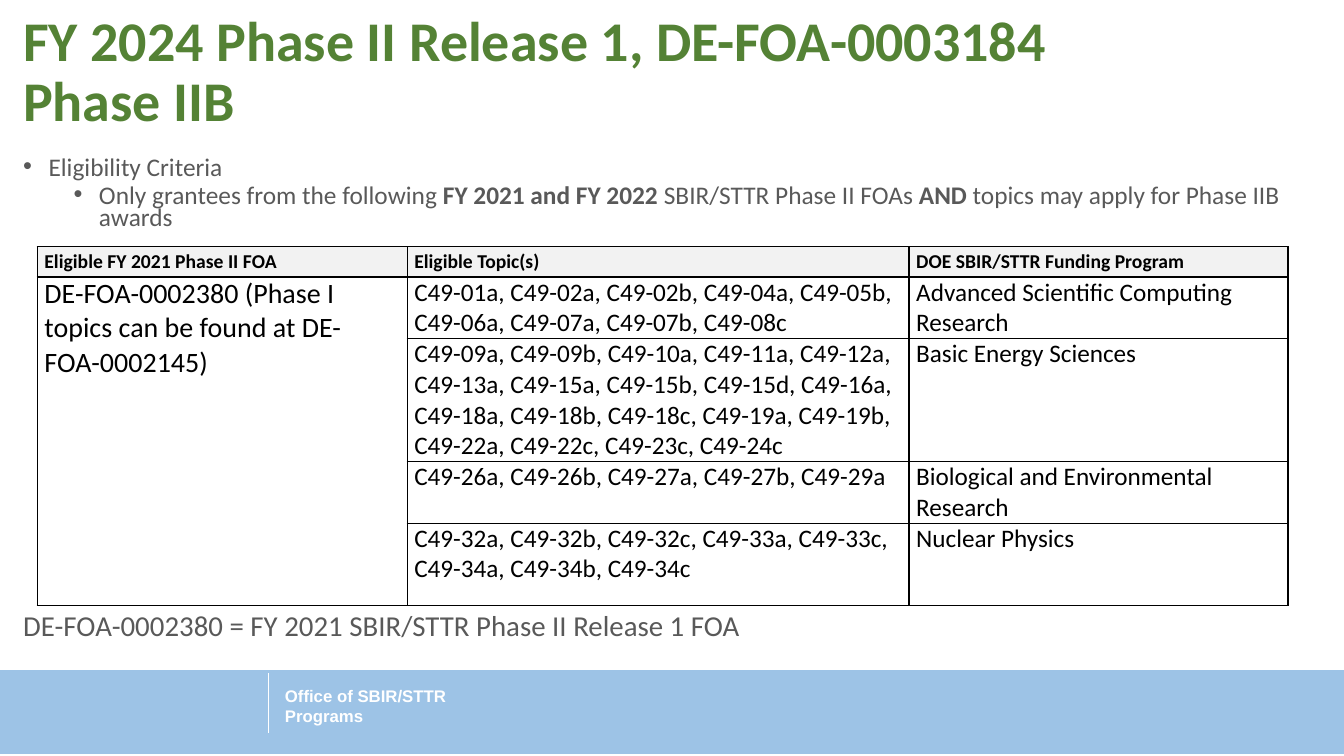
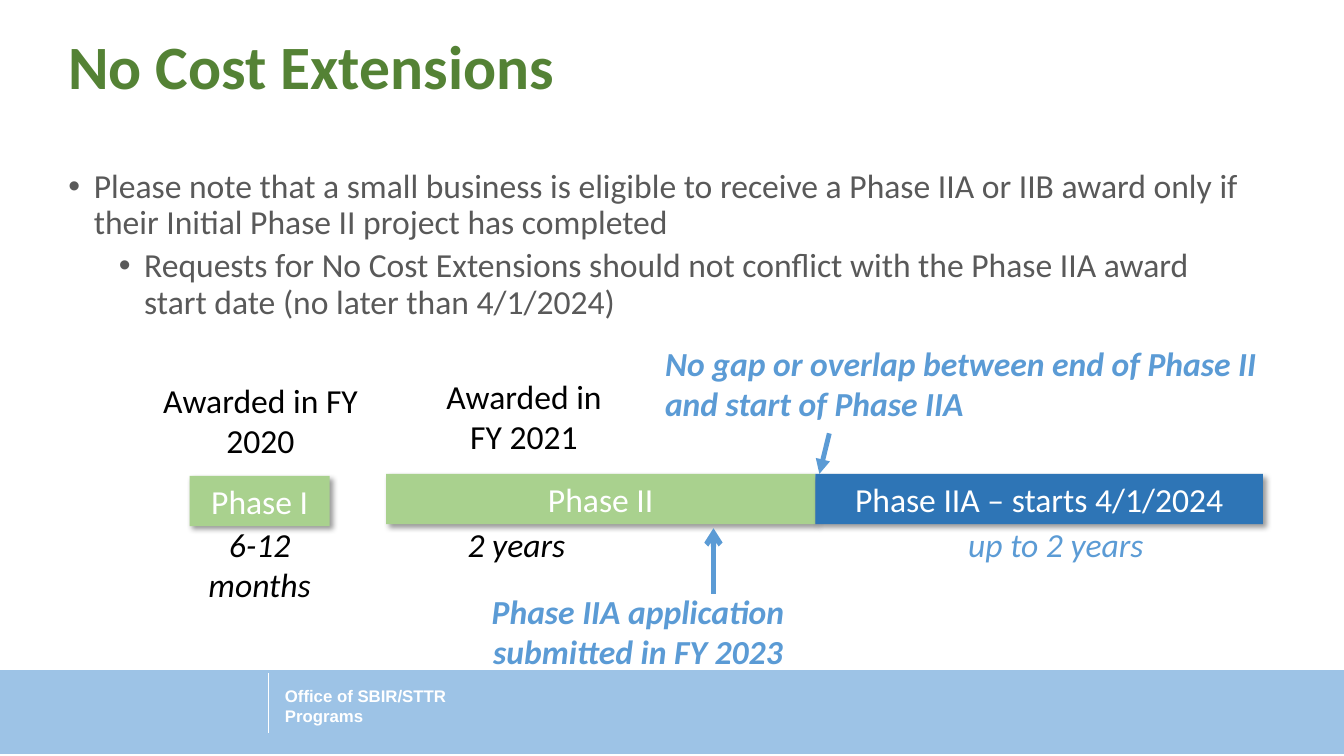
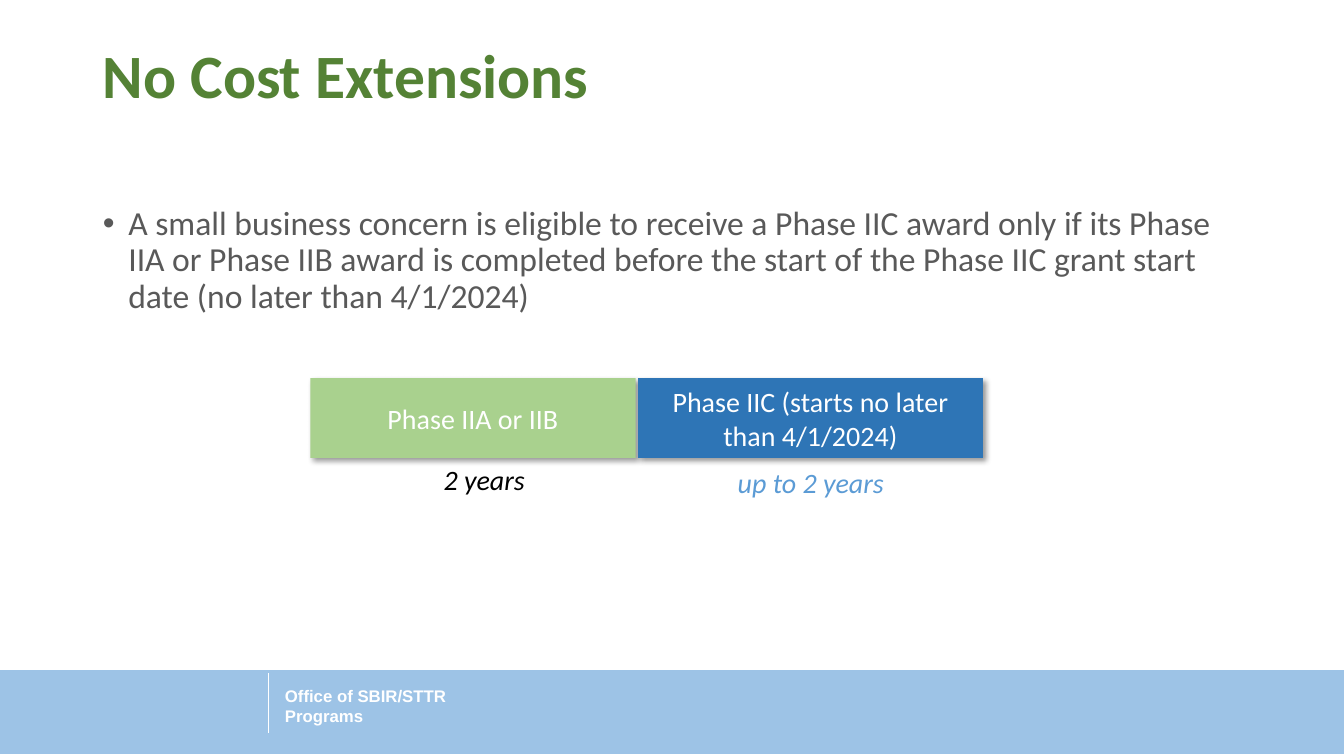
from lxml import etree
from pptx import Presentation
from pptx.dml.color import RGBColor
from pptx.enum import shapes, text as t
from pptx.oxml import parse_xml
from pptx.oxml.ns import nsdecls, qn
from pptx.util import Cm, Pt

GREEN = RGBColor(0x54, 0x82, 0x35)
LIME = RGBColor(0xA9, 0xD1, 0x8E)
GRAY = RGBColor(0x59, 0x59, 0x59)
PALE = RGBColor(0xF2, 0xF2, 0xF2)
SKY = RGBColor(0x9D, 0xC3, 0xE6)
BLUE = RGBColor(0x5B, 0x9B, 0xD5)
NAVY = RGBColor(0x2E, 0x75, 0xB6)
BLACK = RGBColor(0, 0, 0)
WHITE = RGBColor(0xFF, 0xFF, 0xFF)
LEFT, MID = t.PP_ALIGN.LEFT, t.PP_ALIGN.CENTER
TOP, CENTER = t.MSO_ANCHOR.TOP, t.MSO_ANCHOR.MIDDLE
NO_FIT, GROW = t.MSO_AUTO_SIZE.NONE, t.MSO_AUTO_SIZE.SHAPE_TO_FIT_TEXT

HEADS = ["Eligible FY 2021 Phase II FOA", "Eligible Topic(s)",
         "DOE SBIR/STTR Funding Program"]
SOURCE = "DE-FOA-0002380 (Phase I topics can be found at DE-FOA-0002145)"
TOPICS = [
    ("C49-01a, C49-02a, C49-02b, C49-04a, C49-05b, C49-06a, C49-07a, "
     "C49-07b, C49-08c", "Advanced Scientific Computing Research"),
    ("C49-09a, C49-09b, C49-10a, C49-11a, C49-12a, C49-13a, C49-15a, "
     "C49-15b, C49-15d, C49-16a, C49-18a, C49-18b, C49-18c, C49-19a, "
     "C49-19b, C49-22a, C49-22c, C49-23c, C49-24c", "Basic Energy Sciences"),
    ("C49-26a, C49-26b, C49-27a, C49-27b, C49-29a",
     "Biological and Environmental Research"),
    ("C49-32a, C49-32b, C49-32c, C49-33a, C49-33c, C49-34a, C49-34b, "
     "C49-34c", "Nuclear Physics"),
]


def write(para, text, size=24, color=BLACK, bold=False, italic=False,
          align=LEFT, font="Calibri", lead=None, before=None):
    """Fill a paragraph; ** switches bold on and off, a newline breaks the line."""
    para.alignment = align
    if lead:
        para.line_spacing = lead
    if before is not None:
        para.space_before = Pt(before)
    for row, line in enumerate(text.split("\n")):
        if row:
            para.add_line_break()
        for turn, part in enumerate(line.split("**")):
            run = para.add_run()
            run.text = part
            run.font.name, run.font.size = font, Pt(size)
            run.font.color.rgb = color
            run.font.bold = bold or turn % 2 == 1
            run.font.italic = italic


def place(shape, at):
    shape.left, shape.top, shape.width, shape.height = map(Cm, at)


def frame(shape, anchor=TOP, fit=NO_FIT):
    box = shape.text_frame
    box.word_wrap = True
    box.auto_size = fit
    box.vertical_anchor = anchor
    return box


def title(slide, text, at, size=44):
    place(slide.shapes.title, at)
    write(frame(slide.shapes.title).paragraphs[0], text, size=size,
          color=GREEN, bold=True, lead=0.9)


def indent(para, level, bullet):
    para.level = max(level, 0)
    props = para._p.get_or_add_pPr()
    props.set("marL", str(Cm(0.64 + 1.27 * level) if bullet else 0))
    props.set("indent", str(Cm(-0.64) if bullet else 0))
    if bullet:
        etree.SubElement(props, qn("a:buFont"), typeface="Arial")
        etree.SubElement(props, qn("a:buChar"), char="•")
    else:
        etree.SubElement(props, qn("a:buNone"))


def body(slide, at, items, size=24, lead=0.9):
    """Fill the body with bullets, one level deeper each; returns its frame."""
    shape = slide.placeholders[1]
    place(shape, at)
    box = frame(shape)
    for level, text in enumerate(items):
        para = box.add_paragraph() if level else box.paragraphs[0]
        indent(para, level, True)
        write(para, text, size=size, color=GRAY, lead=lead,
              before=5 if level else 0)
    return box


def label(slide, at, text, anchor=TOP, fit=GROW, **style):
    shape = slide.shapes.add_textbox(*map(Cm, at))
    write(frame(shape, anchor, fit).paragraphs[0], text, **style)
    return shape


def block(slide, at, fill):
    shape = slide.shapes.add_shape(shapes.MSO_SHAPE.RECTANGLE, *map(Cm, at))
    shape.fill.solid()
    shape.fill.fore_color.rgb = fill
    shape.line.fill.background()
    shape.shadow.inherit = False
    return shape


def phase(slide, at, text, fill, size=24):
    """A timeline bar with a soft shadow."""
    shape = block(slide, at, fill)
    shape.element.spPr.find(qn("a:effectLst")).append(parse_xml(
        f'<a:outerShdw {nsdecls("a")} blurRad="{Pt(4)}" dist="{Pt(3)}" '
        'dir="2700000" algn="tl" rotWithShape="0"><a:srgbClr val="000000">'
        '<a:alpha val="40000"/></a:srgbClr></a:outerShdw>'))
    write(frame(shape, CENTER).paragraphs[0], text, size=size, color=WHITE,
          align=MID)


def line(slide, ends, color, width, head=None):
    link = slide.shapes.add_connector(shapes.MSO_CONNECTOR.STRAIGHT,
                                      *map(Cm, ends))
    link.line.color.rgb = color
    link.line.width = Pt(width)
    if head:
        etree.SubElement(link.line._get_or_add_ln(), qn("a:tailEnd"), type=head)
    etree.SubElement(link.element.spPr, qn("a:effectLst"))
    return link


def brand(layout, slide):
    """Build the footer band and move it to the layout all slides share."""
    for spare in list(layout.placeholders)[2:]:
        layout.shapes.element.remove(spare.element)
    band = block(slide, (0, 16.89, 33.87, 2.11), SKY)
    name = label(slide, (6.93, 17.12, 5.36, 1.32),
                 "Office of SBIR/STTR Programs", anchor=CENTER, fit=NO_FIT,
                 size=12, color=WHITE, bold=True, font="Arial")
    rule = line(slide, (6.76, 16.97, 6.76, 18.47), WHITE, 1)
    for part in (band, name, rule):
        layout.shapes.element.append(part.element)


def cell(spot, text, size=18, fill=WHITE, anchor=TOP, bold=False):
    spot.margin_left = spot.margin_right = Cm(0.18)
    spot.margin_top = spot.margin_bottom = 0
    spot.vertical_anchor = anchor
    props = spot._tc.get_or_add_tcPr()
    for side in "LRTB":
        props.append(parse_xml(
            f'<a:ln{side} {nsdecls("a")} w="{Pt(1)}"><a:solidFill>'
            f'<a:srgbClr val="{BLACK}"/></a:solidFill></a:ln{side}>'))
    spot.fill.solid()
    spot.fill.fore_color.rgb = fill
    if text:
        write(spot.text_frame.paragraphs[0], text, size=size, bold=bold)


def grid(slide):
    cols, rows = (9.32, 12.65, 9.55), (0.76, 1.55, 3.1, 1.55, 2.08)
    area = map(Cm, (0.94, 6.22, sum(cols), sum(rows)))
    table = slide.shapes.add_table(len(rows), len(cols), *area).table
    table.first_row = table.horz_banding = False
    for col, width in zip(table.columns, cols):
        col.width = Cm(width)
    for row, height in zip(table.rows, rows):
        row.height = Cm(height)
    for col, head in enumerate(HEADS):
        cell(table.cell(0, col), head, size=14, fill=PALE, anchor=CENTER,
             bold=True)
    for row, (topics, office) in enumerate(TOPICS, 1):
        cell(table.cell(row, 0), SOURCE if row == 1 else "", size=20)
        cell(table.cell(row, 1), topics)
        cell(table.cell(row, 2), office)
    table.cell(1, 0).merge(table.cell(len(TOPICS), 0))


def criteria(slide):
    title(slide, "FY 2024 Phase II Release 1, DE-FOA-0003184\nPhase IIB",
          (0.33, 0.2, 30.48, 3.71), size=40)
    box = body(slide, (0.33, 3.89, 33.2, 13.36), [
        "Eligibility Criteria",
        "Only grantees from the following **FY 2021 and FY 2022 **SBIR/STTR "
        "Phase II FOAs **AND** topics may apply for Phase IIB awards",
    ], size=18.1, lead=0.7)
    note = box.add_paragraph()
    indent(note, 0, False)
    write(note, "DE-FOA-0002380 = FY 2021 SBIR/STTR Phase II Release 1 FOA",
          size=20.6, color=GRAY, lead=0.7, before=276)
    grid(slide)


def timing(slide):
    title(slide, "No Cost Extensions", (1.47, 0.79, 29.21, 3.68))
    body(slide, (1.47, 4.14, 30.48, 11.51), [
        "Please note that a small business is eligible to receive a Phase IIA "
        "or IIB award only if their Initial Phase II project has completed",
        "Requests for No Cost Extensions should not conflict with the Phase "
        "IIA award start date (no later than 4/1/2024)",
    ])
    phase(slide, (4.78, 11.99, 3.53, 1.27), "Phase I", LIME)
    phase(slide, (9.73, 11.94, 10.82, 1.27), "Phase II", LIME)
    for at, text, color in [
            ((4.88, 13.08, 3.33, 2.31), "6-12 months", BLACK),
            ((11.35, 13.08, 3.33, 1.27), "2 years", BLACK),
            ((23.7, 13.08, 5.82, 1.27), "up to 2 years", BLUE)]:
        label(slide, at, text, color=color, italic=True, align=MID)
    line(slide, (17.98, 14.96, 17.98, 13.31), BLUE, 3.75, "arrow")
    label(slide, (12.09, 14.76, 7.98, 2.31),
          "Phase IIA application submitted in FY 2023", color=BLUE, bold=True,
          italic=True, align=MID)
    label(slide, (3.2, 9.45, 6.73, 2.31), "Awarded in FY 2020", align=MID)
    label(slide, (10.87, 9.35, 4.67, 2.31), "Awarded in FY 2021", align=MID)
    label(slide, (16.51, 8.51, 15.67, 2.31),
          "No gap or overlap between end of Phase II and start of Phase IIA",
          color=BLUE, bold=True, italic=True)
    line(slide, (20.9, 10.92, 20.65, 11.94), BLUE, 3.5, "triangle")
    phase(slide, (20.55, 11.94, 11.28, 1.27), "Phase IIA – starts 4/1/2024",
          NAVY)


def renewal(slide):
    title(slide, "No Cost Extensions", (2.34, 1.02, 29.21, 3.68))
    body(slide, (2.34, 5.08, 29.21, 11.05), [
        "A small business concern is eligible to receive a Phase IIC award "
        "only if its Phase IIA or Phase IIB award is completed before the "
        "start of the Phase IIC grant start date (no later than 4/1/2024)",
    ])
    phase(slide, (7.82, 9.53, 8.2, 2.01), "Phase IIA or IIB", LIME, size=20)
    phase(slide, (16.08, 9.53, 8.69, 2.01),
          "Phase IIC (starts no later than 4/1/2024)", NAVY, size=20)
    label(slide, (10.54, 11.53, 3.33, 1.12), "2 years", size=20, italic=True,
          align=MID)
    label(slide, (17.4, 11.61, 6.07, 1.12), "up to 2 years", size=20,
          color=BLUE, italic=True, align=MID)


def main():
    deck = Presentation()
    deck.slide_width, deck.slide_height = Cm(33.87), Cm(19.05)
    layout = deck.slide_layouts[1]
    pages = [deck.slides.add_slide(layout) for _ in range(3)]
    brand(layout, pages[0])
    for build, page in zip((criteria, timing, renewal), pages):
        build(page)
    deck.save("out.pptx")


if __name__ == "__main__":
    main()
